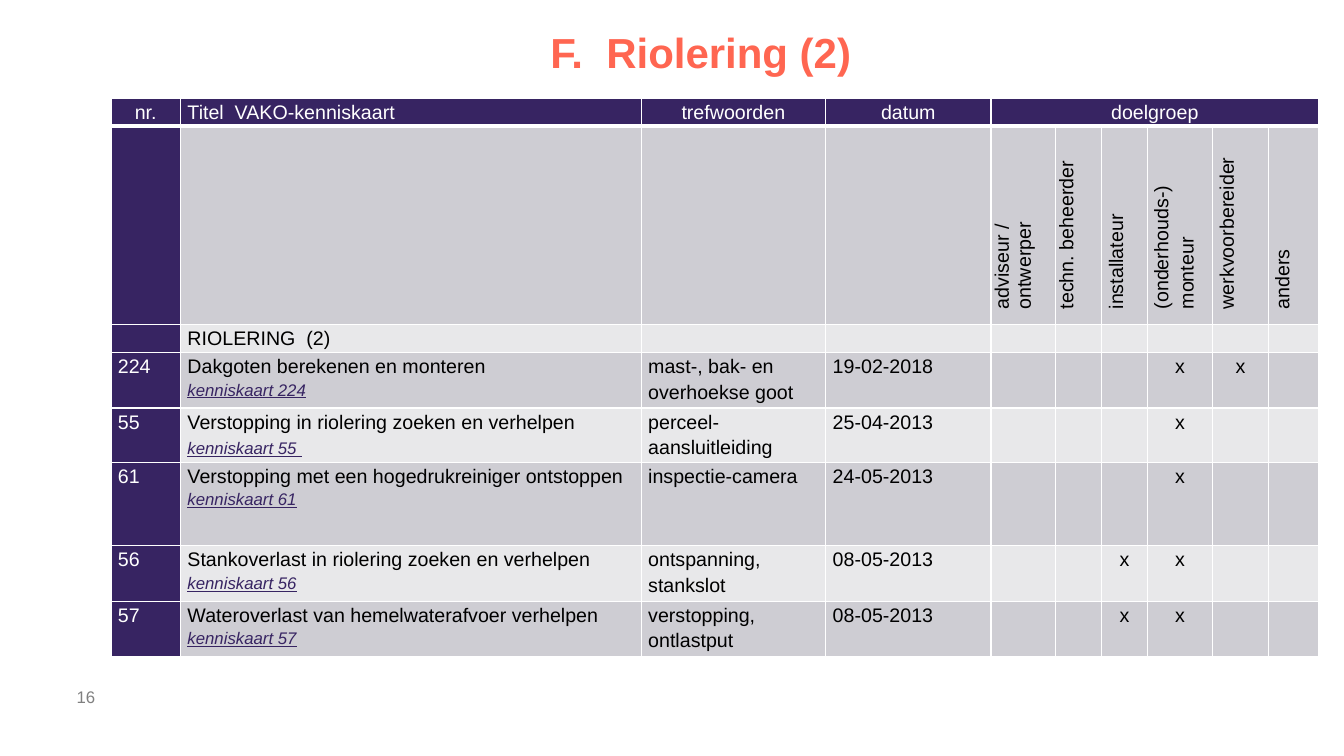
from lxml import etree
from pptx import Presentation
from pptx.dml.color import RGBColor
from pptx.enum.text import MSO_ANCHOR, PP_ALIGN
from pptx.oxml.ns import qn
from pptx.util import Inches, Pt

LEFT, CENTER = PP_ALIGN.LEFT, PP_ALIGN.CENTER
MIDDLE = MSO_ANCHOR.MIDDLE
PURPLE = RGBColor(0x37, 0x24, 0x62)
DARK_BAND = RGBColor(0xCE, 0xCD, 0xD3)
LIGHT_BAND = RGBColor(0xE8, 0xE8, 0xEA)
CORAL = RGBColor(0xFF, 0x66, 0x51)
GRAY = RGBColor(0x80, 0x80, 0x80)
BLACK = RGBColor(0, 0, 0)
WHITE = RGBColor(0xFF, 0xFF, 0xFF)
FONT = "Arial"

COLUMNS = [0.69, 4.57, 1.83, 1.64, 0.64, 0.46, 0.45, 0.65, 0.55, 0.5]
ROWS = [0.26, 1.97, 0.28, 0.55, 0.51, 0.83, 0.55, 0.55]
HEADINGS = ["nr.", "Titel  VAKO-kenniskaart", "trefwoorden", "datum", "doelgroep"]
FIRST_GROUP = 4
GROUPS = ["adviseur / ontwerper", "techn. beheerder", "installateur",
          "(onderhouds-)\nmonteur", "werkvoorbereider", "anders"]
SINGLE_SPACED = GROUPS[:2]
CARDS = [
    ("224", "Dakgoten berekenen en monteren", "mast-, bak- en  overhoekse goot",
     "19-02-2018", [3, 4]),
    ("55", "Verstopping in riolering zoeken en verhelpen", "perceel-aansluitleiding",
     "25-04-2013", [3]),
    ("61", "Verstopping met een hogedrukreiniger ontstoppen", "inspectie-camera",
     "24-05-2013", [3]),
    ("56", "Stankoverlast in riolering zoeken en verhelpen", "ontspanning,\nstankslot",
     "08-05-2013", [2, 3]),
    ("57", "Wateroverlast van hemelwaterafvoer verhelpen", "verstopping,\nontlastput",
     "08-05-2013", [2, 3]),
]


def style(p, size, color, align=LEFT, spacing=1.15, bold=False, italic=False, underline=False):
    p.alignment = align
    p.line_spacing = spacing
    f = p.font
    f.name, f.size, f.bold, f.italic, f.underline = FONT, Pt(size), bold, italic, underline
    f.color.rgb = color


def add_label(s, box, text, size, color, align=LEFT, spacing=1.0, bold=False):
    tf = s.shapes.add_textbox(*map(Inches, box)).text_frame
    tf.word_wrap = True
    tf.vertical_anchor = MIDDLE
    tf.margin_left = tf.margin_right = tf.margin_top = tf.margin_bottom = 0
    tf.text = text
    style(tf.paragraphs[0], size, color, align, spacing, bold)


def format_cell(cell, fill, bottom):
    cell.margin_left = cell.margin_right = Inches(0.07)
    cell.margin_top = cell.margin_bottom = 0
    cell.fill.solid()
    cell.fill.fore_color.rgb = fill
    tcPr = cell._tc.get_or_add_tcPr()
    for i, (side, width) in enumerate([("L", 1), ("R", 1), ("T", 1), ("B", bottom)]):
        ln = etree.Element(qn(f"a:ln{side}"), w=str(Pt(width)))
        solid = etree.SubElement(ln, qn("a:solidFill"))
        etree.SubElement(solid, qn("a:srgbClr"), val=str(WHITE))
        tcPr.insert(i, ln)
    p = cell.text_frame.paragraphs[0]
    etree.SubElement(p._p, qn("a:endParaRPr"), sz="1400")


def write(cell, text, color=BLACK, align=LEFT, spacing=1.15):
    cell.text = text
    for p in cell.text_frame.paragraphs:
        style(p, 14, color, align, spacing)


def write_group(cell, text):
    write(cell, text, spacing=1.0 if text in SINGLE_SPACED else 1.15)
    cell._tc.get_or_add_tcPr().set("vert", "vert270")
    for p in cell.text_frame.paragraphs:
        pPr = p._p.get_or_add_pPr()
        pPr.set("marL", str(Inches(0.08)))
        pPr.set("indent", "0")


def write_card(table, row, card):
    number, title, keywords, date, marks = card
    write(table.cell(row, 0), number, WHITE)
    write(table.cell(row, 1), title)
    p = table.cell(row, 1).text_frame.add_paragraph()
    p.add_run().text = f"kenniskaart {number}"
    style(p, 12, PURPLE, italic=True, underline=True)
    if number == "55":
        r = p.add_run()
        r.text = " "
        r.font.size, r.font.italic = Pt(14), False
    write(table.cell(row, 2), keywords)
    write(table.cell(row, 3), date)
    for mark in marks:
        write(table.cell(row, FIRST_GROUP + mark), "x", align=CENTER)


def add_card_table(s, left, top):
    table = s.shapes.add_table(len(ROWS), len(COLUMNS), Inches(left), Inches(top),
                               Inches(sum(COLUMNS)), Inches(sum(ROWS))).table
    table.first_row = table.horz_banding = False
    for column, width in zip(table.columns, COLUMNS):
        column.width = Inches(width)
    for r, height in enumerate(ROWS):
        table.rows[r].height = Inches(height)
        band = DARK_BAND if r % 2 else LIGHT_BAND
        for c in range(len(COLUMNS)):
            format_cell(table.cell(r, c), PURPLE if r == 0 or c == 0 else band,
                        1 if r else 3)
    table.cell(0, FIRST_GROUP).merge(table.cell(0, len(COLUMNS) - 1))
    for c, heading in enumerate(HEADINGS):
        write(table.cell(0, c), heading, WHITE, LEFT if c == 1 else CENTER)
    for c, group in enumerate(GROUPS, FIRST_GROUP):
        write_group(table.cell(1, c), group)
    write(table.cell(2, 1), "RIOLERING  (2)")
    for row, card in enumerate(CARDS, 3):
        write_card(table, row, card)


def main():
    prs = Presentation()
    prs.slide_width, prs.slide_height = Inches(13.33), Inches(7.5)
    s = prs.slides.add_slide(prs.slide_layouts[6])
    add_label(s, (0.76, 6.71, 0.71, 0.4), "16", 12, GRAY)
    add_card_table(s, 1.1, 0.98)
    add_label(s, (1.12, 0.27, 11.78, 0.54), "F.  Riolering (2) ", 30, CORAL, CENTER, 0.9, True)
    prs.save("out.pptx")


if __name__ == "__main__":
    main()
